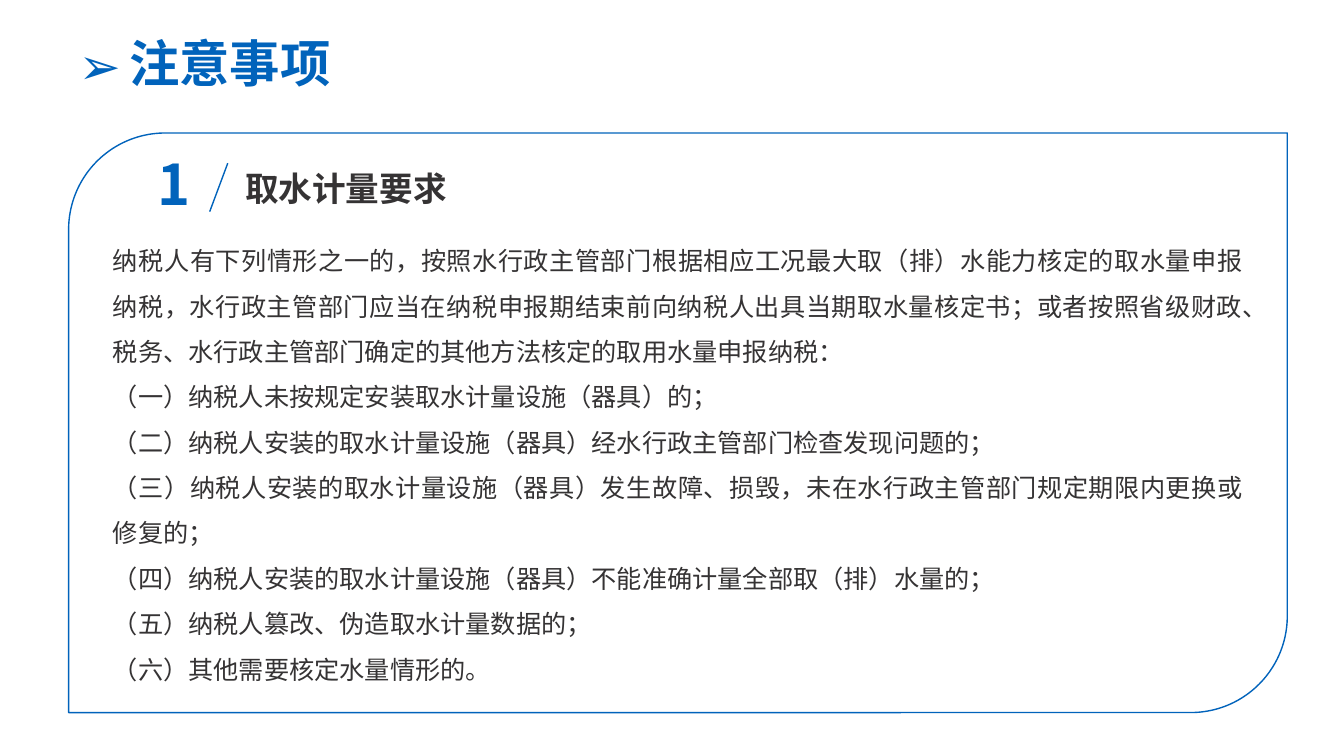
from lxml import etree
from pptx import Presentation
from pptx.dml.color import RGBColor
from pptx.enum.shapes import MSO_CONNECTOR, MSO_SHAPE
from pptx.enum.text import MSO_ANCHOR, MSO_AUTO_SIZE, PP_ALIGN
from pptx.oxml.ns import qn
from pptx.util import Pt

FRAME = MSO_SHAPE.ROUND_2_DIAG_RECTANGLE
STRAIGHT = MSO_CONNECTOR.STRAIGHT
TOP, MIDDLE = MSO_ANCHOR.TOP, MSO_ANCHOR.MIDDLE
LEFT, JUSTIFY = PP_ALIGN.LEFT, PP_ALIGN.JUSTIFY
FIXED = MSO_AUTO_SIZE.NONE

FONT = "Noto Sans CJK SC"
BLUE, DARK = "0163BB", "353334"

RULES = [
    "纳税人有下列情形之一的，按照水行政主管部门根据相应工况最大取（排）水能力核定的取水量申报纳税，"
    "水行政主管部门应当在纳税申报期结束前向纳税人出具当期取水量核定书；"
    "或者按照省级财政、税务、水行政主管部门确定的其他方法核定的取用水量申报纳税：",
    "（一）纳税人未按规定安装取水计量设施（器具）的；",
    "（二）纳税人安装的取水计量设施（器具）经水行政主管部门检查发现问题的；",
    "（三）纳税人安装的取水计量设施（器具）发生故障、损毁，未在水行政主管部门规定期限内更换或修复的；",
    "（四）纳税人安装的取水计量设施（器具）不能准确计量全部取（排）水量的；",
    "（五）纳税人篡改、伪造取水计量数据的；",
    "（六）其他需要核定水量情形的。",
]


def color(code):
    return RGBColor.from_string(code)


def place(shape, left, top, width, height):
    shape.left, shape.top = Pt(left), Pt(top)
    shape.width, shape.height = Pt(width), Pt(height)


def bullet(para, mark, indent):
    props = para._p.get_or_add_pPr()
    props.set("marL", str(Pt(indent)))
    props.set("indent", str(-Pt(indent)))
    if mark:
        etree.SubElement(props, qn("a:buFont")).set("typeface", FONT)
        etree.SubElement(props, qn("a:buChar")).set("char", mark)
    else:
        etree.SubElement(props, qn("a:buNone"))


def write(shape, lines, size, ink, bold=False, align=LEFT, anchor=MIDDLE,
          space=1.0, mark=None, indent=0, wrap=True):
    frame = shape.text_frame
    frame.auto_size = FIXED
    frame.word_wrap = wrap
    frame.vertical_anchor = anchor
    frame.margin_left = frame.margin_right = 0
    frame.margin_top = frame.margin_bottom = 0
    frame.text = "\n".join(lines)
    for para in frame.paragraphs:
        para.alignment = align
        para.line_spacing = space
        para.space_before = Pt(0)
        bullet(para, mark, indent)
        font = para.runs[0].font
        font.size, font.bold, font.name = Pt(size), bold, FONT
        font.color.rgb = color(ink)
        etree.SubElement(font._element, qn("a:ea")).set("typeface", FONT)


def label(slide, text, box, **form):
    shape = slide.shapes.add_textbox(0, 0, 0, 0)
    place(shape, *box)
    write(shape, [text], **form)


def panel(slide, box):
    shape = slide.shapes.add_shape(FRAME, 0, 0, 0, 0)
    place(shape, *box)
    shape.shadow.inherit = False
    shape.fill.background()
    shape.line.color.rgb = color(BLUE)
    shape.line.width = Pt(1)


def slash(slide, start, end):
    ends = [Pt(n) for n in start + end]
    line = slide.shapes.add_connector(STRAIGHT, *ends)
    line.line.color.rgb = color(BLUE)
    line.line.width = Pt(1)
    etree.SubElement(line._element.spPr, qn("a:effectLst"))


def main():
    deck = Presentation()
    deck.slide_width, deck.slide_height = Pt(960), Pt(540)
    slide = deck.slides.add_slide(deck.slide_layouts[1])
    title, body = slide.placeholders

    panel(slide, (49, 95, 870.5, 414))
    place(title, 56.2, 23, 268.5, 48)
    write(title, ["注意事项"], size=36, ink=BLUE, bold=True,
          space=0.9, mark="➢", indent=36)
    place(body, 80.6, 164.6, 808, 327)
    write(body, RULES, size=18, ink=DARK, align=JUSTIFY,
          anchor=TOP, space=Pt(32.4))
    label(slide, "1", (112.3, 100.7, 20, 60),
          size=40, ink=BLUE, bold=True, wrap=False)
    slash(slide, (162.7, 116.6), (149.8, 151.2))
    label(slide, "取水计量要求", (175, 116, 337, 36),
          size=24, ink=DARK, bold=True)
    deck.save("out.pptx")


if __name__ == "__main__":
    main()
